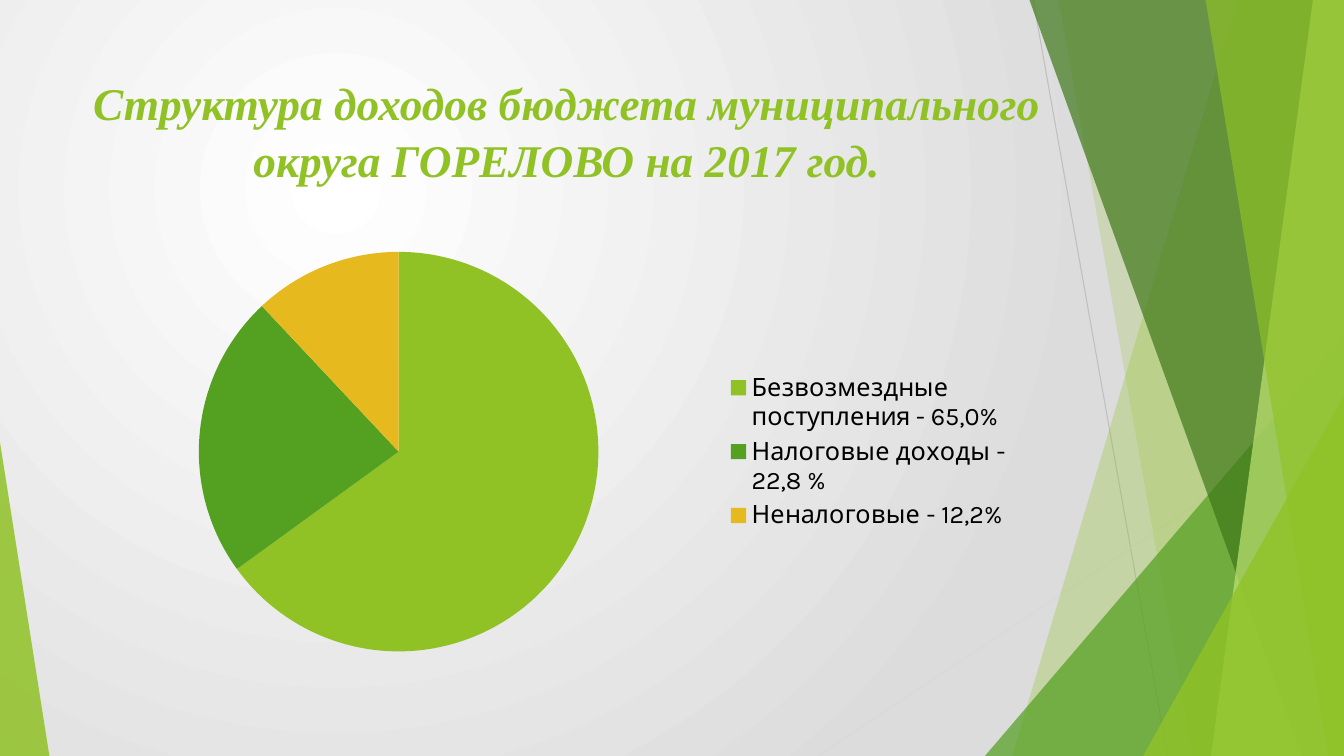
from lxml import etree
from pptx import Presentation
from pptx.chart.data import CategoryChartData as Data
from pptx.dml.color import RGBColor as Rgb
from pptx.enum.chart import XL_CHART_TYPE as Kind, XL_LEGEND_POSITION as Side
from pptx.enum.shapes import MSO_CONNECTOR as Link, MSO_SHAPE as Form
from pptx.enum.text import MSO_ANCHOR as Anchor, PP_ALIGN as Align
from pptx.oxml.ns import qn
from pptx.util import Pt

WIDE, HIGH, TOP = 960, 540, -0.72

TITLE = "Структура доходов бюджета муниципального округа ГОРЕЛОВО на 2017 год."
INCOME = [
    ("Безвозмездные поступления - 65,0%", 65, "lime"),
    ("Налоговые доходы - 22,8 % ", 23, "green"),
    ("Неналоговые - 12,2%", 12, "gold"),
]
THEME = {
    "lime": "90C226", "green": "54A021", "gold": "E6B91E",
    "dark": "3F7819", "pale": "C0E474", "black": "000000",
    "gray": "BFBFBF", "mist": "D9D9D9", "white": "FFFFFF", "edge": "DCDCDC",
    "serif": "Times New Roman", "sans": "Karla", "head": 32.4, "key": 18,
}
LINES = [
    (738, 0, 834, HIGH, "gray"),
    (WIDE, 290, 584.5, HIGH, "mist"),
]
# FACETS
FACETS = [
    ("band", 884, 723, "lime", 30),
    ("band", 756, 852, "lime", 20),
    ("peak", 703.5, 240, 256.5, 1, "green", 72),
    ("band", 735, 929.5, "dark", 70),
    ("band", 938, 865, "pale", 70),
    ("band", 861, 949, "lime", 65),
    ("peak", 816.5, 283, 143.5, 1, "lime", 80),
    ("peak", 0, 316, 35.3, 0, "lime", 85),
]


def tint(name):
    return Rgb.from_string(THEME[name])


def paint(shape, name, alpha):
    shape.shadow.inherit = False
    shape.line.fill.background()
    shape.fill.solid()
    shape.fill.fore_color.rgb = tint(name)
    color = shape.fill._xPr.find(".//" + qn("a:srgbClr"))
    etree.SubElement(color, qn("a:alpha")).set("val", str(alpha * 1000))


def band(slide, head, foot, name, alpha):
    pen = slide.shapes.build_freeform(head, TOP, scale=Pt(1))
    pen.add_line_segments([(WIDE, TOP), (WIDE, HIGH), (foot, HIGH)])
    paint(pen.convert_to_shape(), name, alpha)


def peak(slide, left, top, width, tip, name, alpha):
    shape = slide.shapes.add_shape(
        Form.ISOSCELES_TRIANGLE, Pt(left), Pt(top), Pt(width), Pt(HIGH - top))
    shape.adjustments[0] = tip
    paint(shape, name, alpha)


def rule(slide, x1, y1, x2, y2, name):
    line = slide.shapes.add_connector(Link.STRAIGHT, Pt(x1), Pt(y1), Pt(x2), Pt(y2))
    line.line.color.rgb = tint(name)
    line.line.width = Pt(0.75)
    etree.SubElement(line._element.spPr, qn("a:effectLst"))


def style(font, face, size, color, bold=False, italic=False):
    font.name, font.size = THEME[face], Pt(THEME[size])
    font.color.rgb = tint(color)
    font.bold, font.italic = bold, italic


def write(slide, text, box, align=Align.LEFT, gap=1, **look):
    frame = slide.shapes.add_textbox(*map(Pt, box)).text_frame
    frame.word_wrap = True
    frame.vertical_anchor = Anchor.TOP
    para = frame.paragraphs[0]
    para.alignment, para.line_spacing = align, gap
    run = para.add_run()
    run.text = text
    style(run.font, **look)


def backdrop(slide):
    fill = slide.background.fill
    fill.gradient()
    for stop, spot, name in zip(fill.gradient_stops, (0, 1), ("white", "edge")):
        stop.position = spot
        stop.color.rgb = tint(name)
    grad = slide.element.find(".//" + qn("a:gradFill"))
    grad.remove(grad.find(qn("a:lin")))
    glow = etree.SubElement(grad, qn("a:path"))
    glow.set("path", "circle")
    rect = etree.SubElement(glow, qn("a:fillToRect"))
    for side, part in zip("ltrb", (50, 50, 100, 100)):
        rect.set(side, str(part * 1000))


def pie(slide, box):
    data = Data()
    data.categories = [label for label, _, _ in INCOME]
    data.add_series("Series 1", [share for _, share, _ in INCOME])
    chart = slide.shapes.add_chart(Kind.PIE, *map(Pt, box), data).chart
    style(chart.font, "sans", "key", "black")
    chart.has_title = False
    chart.has_legend = True
    chart.legend.position = Side.RIGHT
    chart.legend.include_in_layout = False
    plot = chart.plots[0]
    plot.vary_by_categories = True
    for spot, (_, _, name) in enumerate(INCOME):
        form = plot.series[0].points[spot].format
        form.fill.solid()
        form.fill.fore_color.rgb = tint(name)
        form.line.fill.background()


def main():
    deck = Presentation()
    deck.slide_width, deck.slide_height = Pt(WIDE), Pt(HIGH)
    slide = deck.slides.add_slide(deck.slide_layouts[6])
    backdrop(slide)
    for line in LINES:
        rule(slide, *line)
    draw = {"band": band, "peak": peak}
    for kind, *rest in FACETS:
        draw[kind](slide, *rest)
    write(slide, TITLE, (53.3, 48.2, 702.7, 103.7), align=Align.CENTER, gap=1.05,
          face="serif", size="head", color="lime", bold=True, italic=True)
    pie(slide, (53.3, 170, 676.8, 305.3))
    deck.save("out.pptx")


if __name__ == "__main__":
    main()
